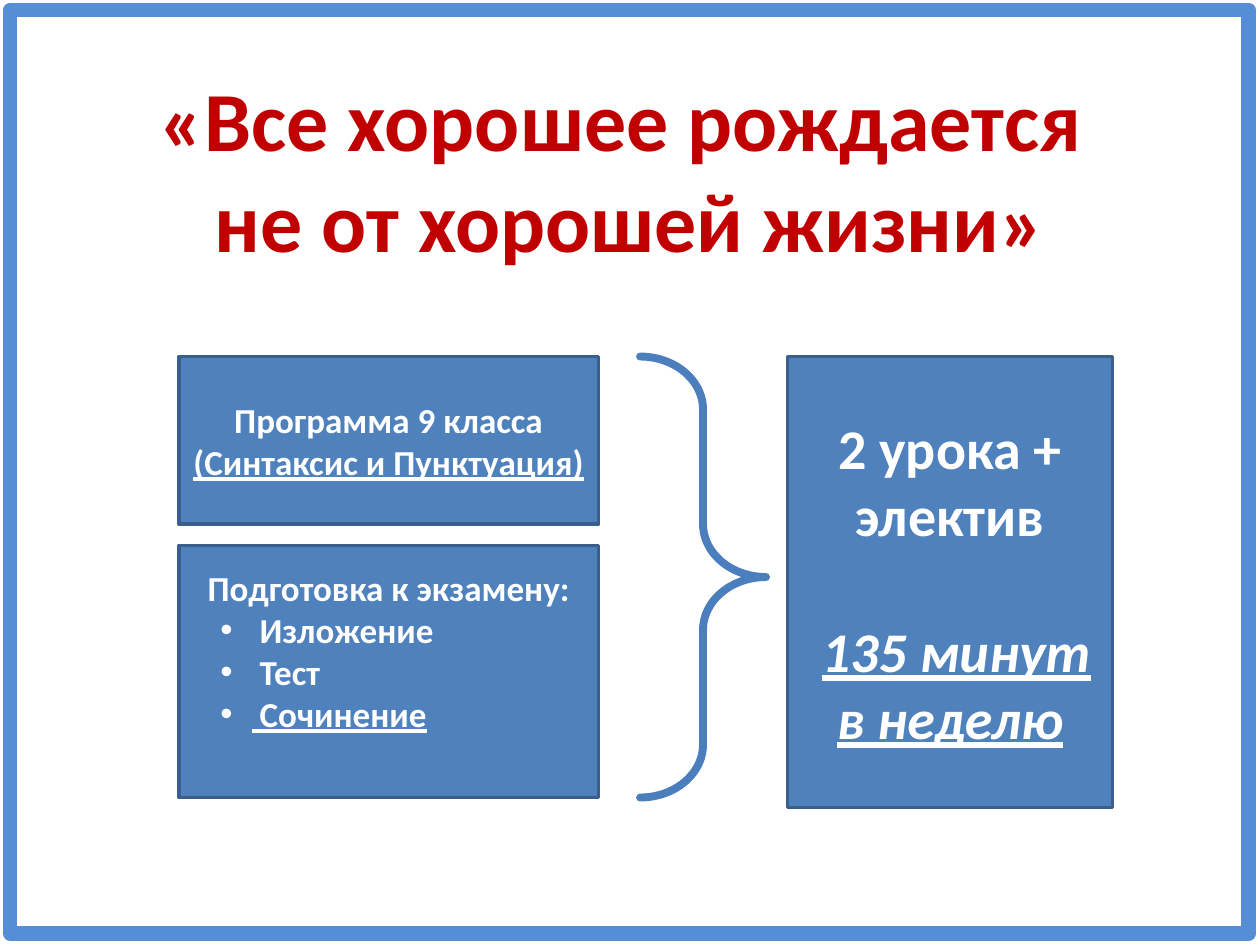
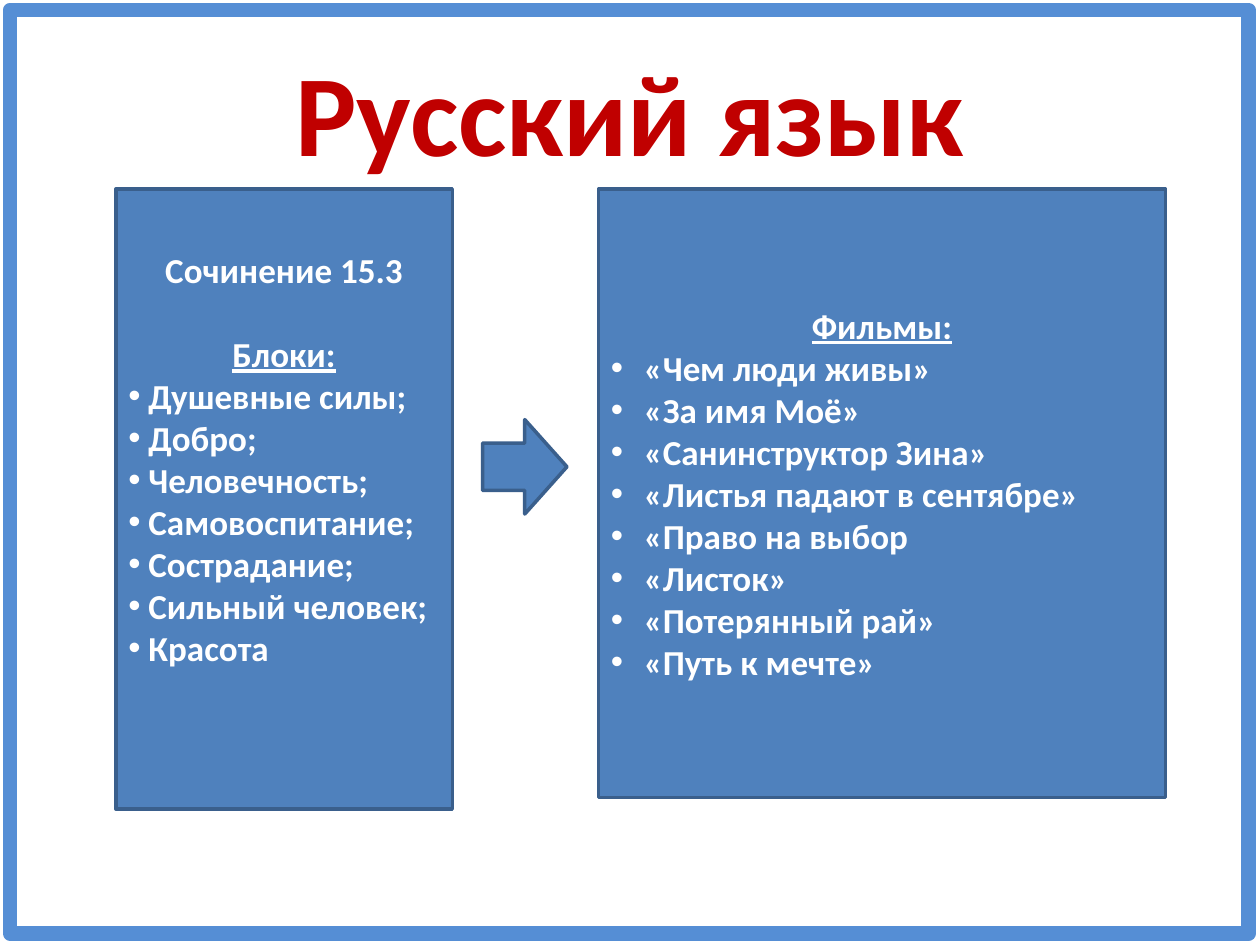
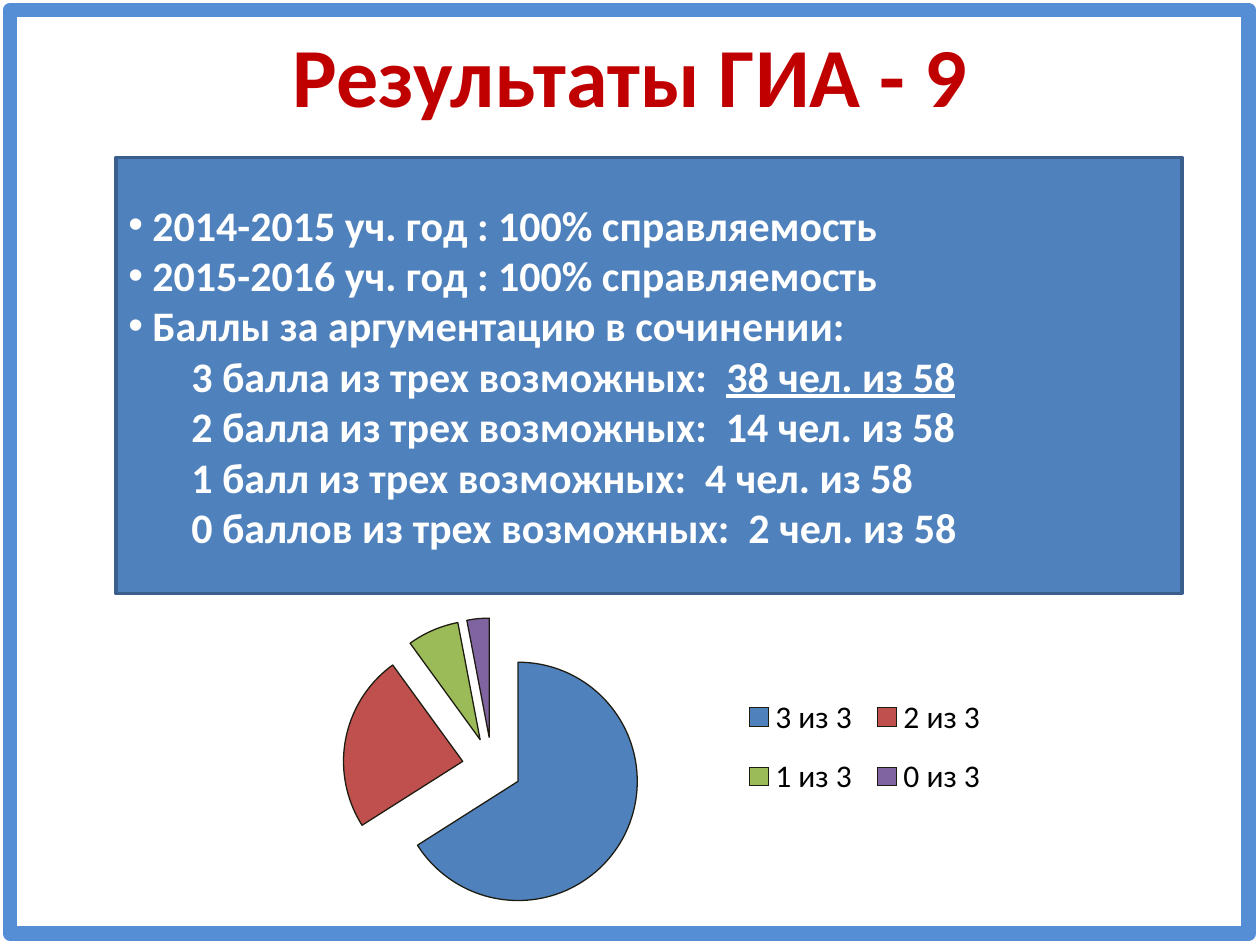
import pptx
import pptx.chart.data
import pptx.dml.color
import pptx.enum.chart
import pptx.enum.shapes
import pptx.enum.text
import pptx.oxml
import pptx.oxml.ns
import pptx.util

Inches = pptx.util.Inches
Pt = pptx.util.Pt
RGBColor = pptx.dml.color.RGBColor
SHAPES = pptx.enum.shapes.MSO_SHAPE
ALIGN = pptx.enum.text.PP_ALIGN
qn = pptx.oxml.ns.qn

# Shared look
FONT = "Calibri"
WHITE = RGBColor(0xFF, 0xFF, 0xFF)
BLACK = RGBColor(0, 0, 0)
TITLE_RED = RGBColor(0xC0, 0, 0)
BOX_BLUE = RGBColor(0x4F, 0x81, 0xBD)
BOX_EDGE = RGBColor(0x3A, 0x5F, 0x8C)
BRACE_BLUE = RGBColor(0x4B, 0x7E, 0xBC)
FRAME_BLUE = RGBColor(0x55, 0x8E, 0xD5)
SLICE_EDGE = RGBColor(0x1E, 0x1C, 0x11)
SLICE_COLORS = [BOX_BLUE, RGBColor(0xC0, 0x50, 0x4D),
                RGBColor(0x9B, 0xBB, 0x59), RGBColor(0x80, 0x64, 0xA2)]
LINE_HEIGHT = 1.22


# Content: a paragraph is (runs, options), a run is (text, style letters)
def centred(text, style="", **options):
    return [(text, style)], dict(align=ALIGN.CENTER, **options)


def bullet(text, style="", margin=0, hanging=0):
    return [(" " + text, style)], dict(bullet=True, margin=margin, hanging=hanging)


def score(label, count, style=""):
    return [(label + " из трех возможных:  ", ""), (count + " чел. из 58", style)], dict(margin=0.5)


PROGRAMME = [centred("Программа 9 класса"), centred("(Синтаксис и Пунктуация)", "u")]
EXAM = [centred("Подготовка к экзамену:")] + [
    bullet(text, style, 0.48, 0.25)
    for text, style in [("Изложение", ""), ("Тест", ""), ("Сочинение", "u")]]
HOURS = [centred("2 урока + электив"),
         ([(" ", ""), ("135 минут в неделю", "iu")], dict(align=ALIGN.CENTER, lines_before=1))]
BLOCKS = [centred("Сочинение 15.3"), centred("Блоки:", "u", lines_before=1)] + [
    bullet(text) for text in ["Душевные силы;", "Добро;", "Человечность;", "Самовоспитание;",
                              "Сострадание;", "Сильный человек;", "Красота"]]
FILMS = [centred("Фильмы:", "u")] + [
    bullet(text, margin=0.2, hanging=0.2)
    for text in ["«Чем люди живы»", "«За имя Моё»", "«Санинструктор Зина»",
                 "«Листья падают в сентябре»", "«Право на выбор", "«Листок»",
                 "«Потерянный рай»", "«Путь к мечте»"]]
RESULTS = [bullet("2014-2015 уч. год : 100% справляемость"),
           bullet("2015-2016 уч. год : 100% справляемость"),
           bullet("Баллы за аргументацию в сочинении:"),
           score("3 балла", "38", "u"), score("2 балла", "14"),
           score("1 балл", "4"), score("0 баллов", "2")]
SHARES = {"3 из 3": 66, "2 из 3": 24, "1 из 3": 7, "0 из 3": 3}


# Helpers
def style_font(font, size, color, bold=False):
    font.name, font.size, font.bold = FONT, Pt(size), bold
    font.color.rgb = color


def add_title(slide, lines, area, size):
    frame = slide.shapes.add_textbox(*map(Inches, area)).text_frame
    frame.word_wrap = True
    frame.vertical_anchor = pptx.enum.text.MSO_ANCHOR.MIDDLE
    paragraph = frame.paragraphs[0]
    paragraph.alignment = ALIGN.CENTER
    for index, line in enumerate(lines):
        if index:
            paragraph.add_line_break()
        run = paragraph.add_run()
        run.text = line
        style_font(run.font, size, TITLE_RED, True)


def add_figure(slide, kind, area, fill=BOX_BLUE, edge=BOX_EDGE, width=2):
    shape = slide.shapes.add_shape(kind, *map(Inches, area))
    shape.shadow.inherit = False
    if fill is None:
        shape.fill.background()
    else:
        shape.fill.solid()
        shape.fill.fore_color.rgb = fill
    shape.line.color.rgb = edge
    shape.line.width = Pt(width)
    return shape


def add_box(slide, area, paragraphs, size, space_below=0):
    frame = add_figure(slide, SHAPES.RECTANGLE, area).text_frame
    frame.word_wrap = True
    frame.margin_bottom = Inches(0.05) + Pt(space_below)
    for index, (runs, options) in enumerate(paragraphs):
        paragraph = frame.add_paragraph() if index else frame.paragraphs[0]
        paragraph.alignment = options.get("align", ALIGN.LEFT)
        paragraph.space_before = Pt(round(options.get("lines_before", 0) * size * LINE_HEIGHT))
        properties = paragraph._p.get_or_add_pPr()
        properties.set("marL", str(Inches(options.get("margin", 0))))
        properties.set("indent", str(-Inches(options.get("hanging", 0))))
        if options.get("bullet"):
            for tag, name, value in [("buFont", "typeface", "Arial"), ("buChar", "char", "•")]:
                properties.append(pptx.oxml.parse_xml(
                    f'<a:{tag} {pptx.oxml.ns.nsdecls("a")} {name}="{value}"/>'))
        for text, style in runs:
            run = paragraph.add_run()
            run.text = text
            style_font(run.font, size, WHITE, True)
            run.font.italic = "i" in style
            run.font.underline = "u" in style


def manual_layout(x, y, w, h, inner=False):
    target = '<c:layoutTarget val="inner"/>' if inner else ""
    return pptx.oxml.parse_xml(
        f'<c:layout {pptx.oxml.ns.nsdecls("c")}><c:manualLayout>{target}'
        '<c:xMode val="edge"/><c:yMode val="edge"/>'
        f'<c:x val="{x}"/><c:y val="{y}"/><c:w val="{w}"/><c:h val="{h}"/>'
        '</c:manualLayout></c:layout>')


def add_pie(slide, area):
    data = pptx.chart.data.CategoryChartData()
    data.categories = list(SHARES)
    data.add_series("Series 1", list(SHARES.values()))
    chart = slide.shapes.add_chart(
        pptx.enum.chart.XL_CHART_TYPE.PIE, *map(Inches, area), data).chart
    chart.has_title = False
    style_font(chart.font, 18, BLACK)
    plot = chart.plots[0]
    plot.vary_by_categories = True

    # Slices pulled apart
    series = plot.series[0]
    series.format.line.color.rgb = SLICE_EDGE
    series._element.find(qn("c:spPr")).addnext(pptx.oxml.parse_xml(
        f'<c:explosion {pptx.oxml.ns.nsdecls("c")} val="25"/>'))
    for index, color in enumerate(SLICE_COLORS):
        slice_format = series.points[index].format
        slice_format.fill.solid()
        slice_format.fill.fore_color.rgb = color
        slice_format.line.color.rgb = SLICE_EDGE
        slice_format.line.width = Pt(0.75)

    # Pie on the left, legend on the right
    plot_area = chart._chartSpace.chart.plotArea
    for layout in plot_area.findall(qn("c:layout")):
        plot_area.remove(layout)
    plot_area.insert(0, manual_layout(0, 0.18, 0.63, 0.81, inner=True))
    chart.has_legend = True
    legend = chart.legend
    legend.position = pptx.enum.chart.XL_LEGEND_POSITION.RIGHT
    legend.include_in_layout = False
    style_font(legend.font, 18, BLACK)
    for layout in legend._element.findall(qn("c:layout")):
        legend._element.remove(layout)
    legend._element.find(qn("c:legendPos")).addnext(manual_layout(0.64, 0.34, 0.35, 0.38))


def build_hours(slide):
    add_title(slide, ["«Все хорошее рождается ", "не от хорошей жизни»"], (0, 0.42, 10, 1.83), 48)
    add_box(slide, (1.42, 2.83, 3.33, 1.33), PROGRAMME, 20)
    add_box(slide, (1.42, 4.33, 3.33, 2), EXAM, 20, space_below=24)
    brace = add_figure(slide, SHAPES.RIGHT_BRACE, (5.08, 2.83, 1, 3.5), None, BRACE_BLUE, 4.5)
    brace.adjustments[0] = 0.42
    brace._element.spPr.find(qn("a:ln")).set("cap", "rnd")
    add_box(slide, (6.25, 2.83, 2.58, 3.58), HOURS, 32)


def build_films(slide):
    add_title(slide, ["Русский язык"], (0.5, 0.25, 9, 1.25), 66)
    add_box(slide, (0.92, 1.5, 2.67, 4.92), BLOCKS, 20, space_below=46)
    add_figure(slide, SHAPES.RIGHT_ARROW, (3.83, 3.33, 0.67, 0.75))
    add_box(slide, (4.75, 1.5, 4.5, 4.83), FILMS, 20)


def build_results(slide):
    add_title(slide, ["Результаты ГИА - 9"], (0.5, 0.17, 9, 0.83), 48)
    add_box(slide, (0.92, 1.25, 8.46, 3.46), RESULTS, 24)
    add_pie(slide, (2.04, 4.38, 5.92, 2.92))


def main():
    presentation = pptx.Presentation()
    presentation.slide_width, presentation.slide_height = Inches(10), Inches(7.5)
    for build in (build_hours, build_films, build_results):
        slide = presentation.slides.add_slide(presentation.slide_layouts[6])
        build(slide)
        add_figure(slide, SHAPES.RECTANGLE, (0.08, 0.08, 9.83, 7.33), None, FRAME_BLUE, 8.25)
    presentation.save("out.pptx")


if __name__ == "__main__":
    main()
